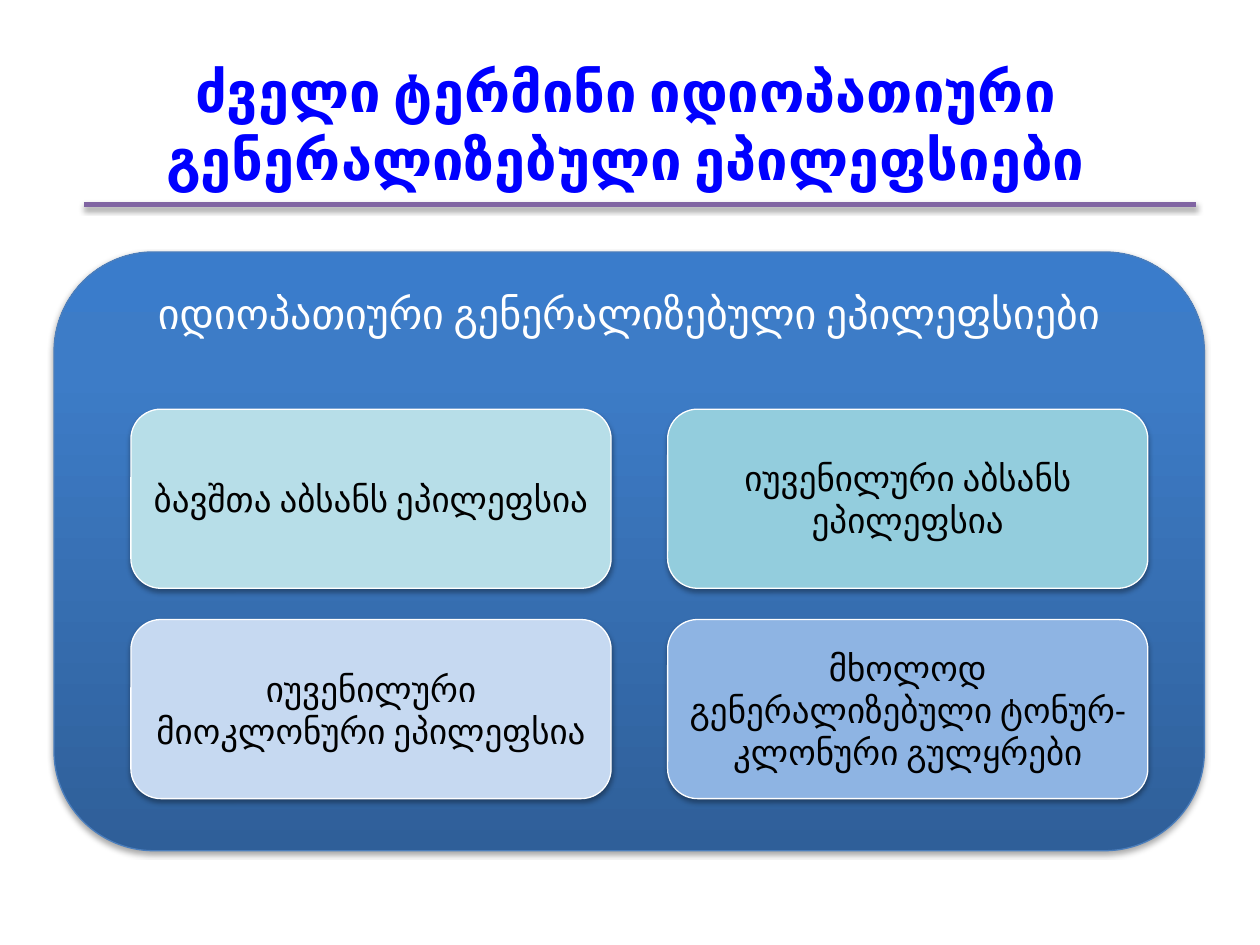
from lxml import etree
from pptx import Presentation
from pptx.dml.color import RGBColor
from pptx.enum.shapes import MSO_CONNECTOR, MSO_SHAPE
from pptx.enum.text import MSO_ANCHOR, MSO_AUTO_SIZE, PP_ALIGN
from pptx.oxml.ns import qn
from pptx.util import Cm, Pt

ROUNDED = MSO_SHAPE.ROUNDED_RECTANGLE
STRAIGHT = MSO_CONNECTOR.STRAIGHT
TOP = MSO_ANCHOR.TOP
MIDDLE = MSO_ANCHOR.MIDDLE
CENTER = PP_ALIGN.CENTER
NO_AUTOFIT = MSO_AUTO_SIZE.NONE

FONT = "Calibri"
TITLE = "ძველი ტერმინი იდიოპათიური გენერალიზებული ეპილეფსიები"
PANEL_TEXT = "იდიოპათიური გენერალიზებული ეპილეფსიები"
PANEL_STOPS = [(0, "2F5F99"), (80, "3D7CC7"), (100, "3A7CCB")]
CARDS = [
    ("ბავშთა აბსანს ეპილეფსია", "B7DEE8"),
    ("იუვენილური აბსანს ეპილეფსია", "93CDDD"),
    ("იუვენილური მიოკლონური ეპილეფსია", "C6D9F1"),
    ("მხოლოდ გენერალიზებული ტონურ-კლონური გულყრები", "8EB4E3"),
]
CARD_LEFT, CARD_TOP = 2.64, 8.25
CARD_WIDTH, CARD_HEIGHT = 9.68, 3.61
COLUMN_STEP, ROW_STEP = 10.82, 4.24


def color(value):
    return RGBColor.from_string(value)


def write(shape, text, size, text_color, anchor=MIDDLE, bold=False):
    frame = shape.text_frame
    frame.text = text
    frame.word_wrap = True
    frame.auto_size = NO_AUTOFIT
    frame.vertical_anchor = anchor
    paragraph = frame.paragraphs[0]
    paragraph.alignment = CENTER
    paragraph.font.name = FONT
    paragraph.font.size = Pt(size)
    paragraph.font.bold = bold
    paragraph.font.color.rgb = color(text_color)


def set_line(shape, line_color, width):
    shape.line.color.rgb = color(line_color)
    shape.line.width = Pt(width)


def add_shadow(shape):
    effects = etree.SubElement(shape._element.spPr, qn("a:effectLst"))
    shadow = etree.SubElement(
        effects, qn("a:outerShdw"), blurRad=str(Pt(3.1)), dist=str(Pt(1.8)),
        dir="5400000", rotWithShape="0")
    shade = etree.SubElement(shadow, qn("a:srgbClr"), val="000000")
    etree.SubElement(shade, qn("a:alpha"), val="35000")


def set_gradient(shape, stops):
    shape.fill.gradient()
    shape.fill.gradient_angle = 90
    stop_list = shape._element.spPr.find(".//" + qn("a:gsLst"))
    for stop in list(stop_list):
        stop_list.remove(stop)
    for position, stop_color in stops:
        stop = etree.SubElement(stop_list, qn("a:gs"), pos=str(position * 1000))
        etree.SubElement(stop, qn("a:srgbClr"), val=stop_color)


def add_title(slide):
    title = slide.shapes.title
    title.left, title.top = Cm(0.51), Cm(0.91)
    title.width, title.height = Cm(24.21), Cm(3.18)
    write(title, TITLE, 32, "0000FF", bold=True)


def add_panel(slide):
    panel = slide.shapes.add_shape(ROUNDED, Cm(1.09), Cm(5.08), Cm(23.19), Cm(12.07))
    set_gradient(panel, PANEL_STOPS)
    set_line(panel, "4B7EBC", 0.75)
    add_shadow(panel)
    write(panel, PANEL_TEXT, 24, "FFFFFF", anchor=TOP)


def add_card(slide, index, text, fill_color):
    row, column = divmod(index, 2)
    card = slide.shapes.add_shape(
        ROUNDED, Cm(CARD_LEFT + column * COLUMN_STEP), Cm(CARD_TOP + row * ROW_STEP),
        Cm(CARD_WIDTH), Cm(CARD_HEIGHT))
    card.fill.solid()
    card.fill.fore_color.rgb = color(fill_color)
    set_line(card, "FFFFFF", 0.75)
    add_shadow(card)
    write(card, text, 20, "000000")
    card.text_frame.margin_left = card.text_frame.margin_right = Cm(0.2)


def add_rule(slide):
    rule = slide.shapes.add_connector(STRAIGHT, Cm(1.7), Cm(4.12), Cm(24.1), Cm(4.12))
    set_line(rule, "8064A2", 3)
    add_shadow(rule)


def main():
    presentation = Presentation()
    presentation.slide_width, presentation.slide_height = Cm(25.4), Cm(19.05)
    slide = presentation.slides.add_slide(presentation.slide_layouts[5])
    add_title(slide)
    add_panel(slide)
    for index, (text, fill_color) in enumerate(CARDS):
        add_card(slide, index, text, fill_color)
    add_rule(slide)
    presentation.save("out.pptx")


if __name__ == "__main__":
    main()
